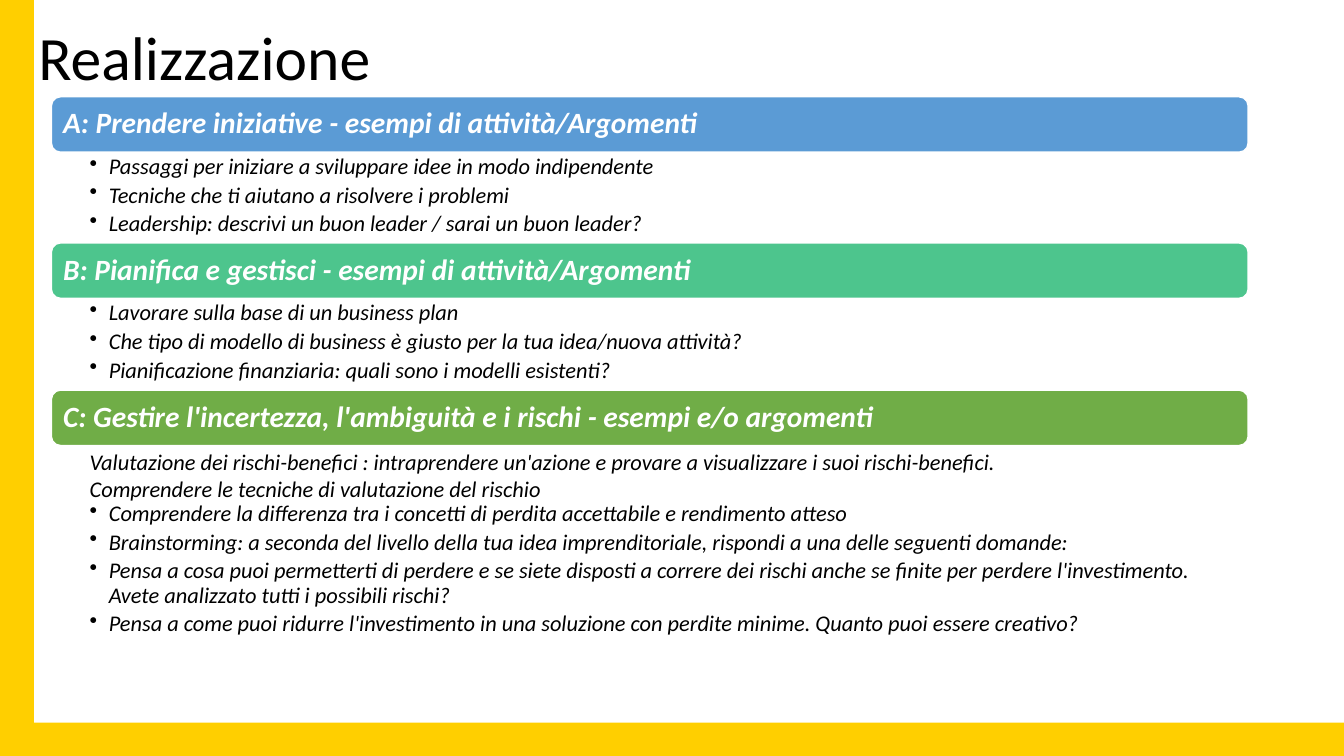
from dataclasses import dataclass

from lxml.etree import SubElement
from pptx import Presentation
from pptx.dml.color import RGBColor
from pptx.enum.shapes import MSO_SHAPE
from pptx.enum.text import MSO_ANCHOR, MSO_AUTO_SIZE, PP_ALIGN
from pptx.oxml.ns import qn
from pptx.util import Inches, Pt


@dataclass(frozen=True)
class Theme:
    font: str = "Calibri"
    yellow: str = "FFCF00"
    blue: str = "5B9BD5"
    teal: str = "4DC58D"
    green: str = "70AD47"
    white: str = "FFFFFF"
    black: str = "000000"
    title_size: int = 44
    heading_size: int = 21
    body_size: int = 16


THEME = Theme()
SLIDE_WIDTH, SLIDE_HEIGHT = 13.33, 7.5
TITLE_BOX = (0.28, -0.12, 11.5, 1.45)
SECTIONS_LEFT, SECTIONS_TOP, SECTIONS_WIDTH = 0.51, 0.96, 11.87
HEADING_HEIGHT = 0.55
BULLET_INDENT = 0.19

# Each section: heading, colour, body height, plain lines, bulleted lines
SECTIONS = [
    ("A: Prendere iniziative - esempi di attività/Argomenti", THEME.blue, 0.9, [], [
        "Passaggi per iniziare a sviluppare idee in modo indipendente",
        "Tecniche che ti aiutano a risolvere i problemi",
        "Leadership: descrivi un buon leader / sarai un buon leader?",
    ]),
    ("B: Pianifica e gestisci - esempi di attività/Argomenti", THEME.teal, 0.91, [], [
        "Lavorare sulla base di un business plan",
        "Che tipo di modello di business è giusto per la tua idea/nuova attività?",
        "Pianificazione finanziaria: quali sono i modelli esistenti?",
    ]),
    ("C: Gestire l'incertezza, l'ambiguità e i rischi - esempi e/o argomenti", THEME.green, 2.04, [
        "Valutazione dei rischi-benefici : intraprendere un'azione e provare a visualizzare "
        "i suoi rischi-benefici.",
        "Comprendere le tecniche di valutazione del rischio",
    ], [
        "Comprendere la differenza tra i concetti di perdita accettabile e rendimento atteso",
        "Brainstorming: a seconda del livello della tua idea imprenditoriale, rispondi a una "
        "delle seguenti domande:",
        "Pensa a cosa puoi permetterti di perdere e se siete disposti a correre dei rischi anche "
        "se finite per perdere l'investimento. Avete analizzato tutti i possibili rischi?",
        "Pensa a come puoi ridurre l'investimento in una soluzione con perdite minime. "
        "Quanto puoi essere creativo?",
    ]),
]


def set_attributes(target, values):
    for name, value in values.items():
        setattr(target, name, value)


def write_paragraph(paragraph, text, size, color, line_spacing=0.9, space_after=0, **font_values):
    set_attributes(paragraph, {
        "alignment": PP_ALIGN.LEFT, "line_spacing": line_spacing,
        "space_before": Pt(0), "space_after": Pt(space_after),
    })
    run = paragraph.add_run()
    run.text = text
    set_attributes(run.font, {"name": THEME.font, "size": Pt(size), **font_values})
    run.font.color.rgb = RGBColor.from_string(color)


def add_bullet(paragraph):
    properties = paragraph._p.get_or_add_pPr()
    indent = Inches(BULLET_INDENT)
    properties.set("marL", str(indent))
    properties.set("indent", str(-indent))
    SubElement(properties, qn("a:buChar")).set("char", "•")


def add_filled_shape(slide, preset, box, color):
    shape = slide.shapes.add_shape(preset, *map(Inches, box))
    shape.shadow.inherit = False
    shape.fill.solid()
    shape.fill.fore_color.rgb = RGBColor.from_string(color)
    shape.line.fill.background()
    return shape


def add_corner_border(slide, box):
    border = add_filled_shape(slide, MSO_SHAPE.CORNER, box, THEME.yellow)
    border.adjustments[0] = 0.044
    border.adjustments[1] = 0.045


def place_title(slide, box, text):
    title = slide.shapes.title
    set_attributes(title, dict(zip(("left", "top", "width", "height"), map(Inches, box))))
    set_attributes(title.text_frame, {
        "word_wrap": True, "auto_size": MSO_AUTO_SIZE.NONE, "vertical_anchor": MSO_ANCHOR.MIDDLE,
    })
    write_paragraph(title.text_frame.paragraphs[0], text, THEME.title_size, THEME.black)


def add_heading_bar(slide, box, text, color):
    bar = add_filled_shape(slide, MSO_SHAPE.ROUNDED_RECTANGLE, box, color)
    bar.line.color.rgb = RGBColor.from_string(THEME.white)
    bar.line.width = Pt(1)
    set_attributes(bar.text_frame, {
        "word_wrap": True, "vertical_anchor": MSO_ANCHOR.MIDDLE,
        "margin_left": Inches(0.09), "margin_right": Inches(0.09),
    })
    write_paragraph(bar.text_frame.paragraphs[0], text, THEME.heading_size, THEME.white,
                    bold=True, italic=True)


def add_section_body(slide, box, plain_lines, bullet_lines):
    frame = slide.shapes.add_textbox(*map(Inches, box)).text_frame
    set_attributes(frame, {
        "word_wrap": True, "margin_left": Inches(0.38), "margin_right": Inches(0.16),
        "margin_top": Inches(0.03), "margin_bottom": Inches(0.03),
    })
    for index, text in enumerate(plain_lines + bullet_lines):
        paragraph = frame.paragraphs[0] if index == 0 else frame.add_paragraph()
        bulleted = index >= len(plain_lines)
        spacing = {"line_spacing": 0.9, "space_after": 3.2} if bulleted else {"line_spacing": 1.0}
        write_paragraph(paragraph, text, THEME.body_size, THEME.black, italic=True, **spacing)
        if bulleted:
            add_bullet(paragraph)


def add_sections(slide, left, top, width):
    """Stack heading bars and their bodies downwards from the given top."""
    for heading, color, body_height, plain_lines, bullet_lines in SECTIONS:
        add_heading_bar(slide, (left, top, width, HEADING_HEIGHT), heading, color)
        top += HEADING_HEIGHT
        add_section_body(slide, (left, top, width, body_height), plain_lines, bullet_lines)
        top += body_height


def main():
    presentation = Presentation()
    presentation.slide_width = Inches(SLIDE_WIDTH)
    presentation.slide_height = Inches(SLIDE_HEIGHT)
    slide = presentation.slides.add_slide(presentation.slide_layouts.get_by_name("Title Only"))
    add_corner_border(slide, (0, 0, SLIDE_WIDTH, SLIDE_HEIGHT))
    place_title(slide, TITLE_BOX, "Realizzazione")
    add_sections(slide, SECTIONS_LEFT, SECTIONS_TOP, SECTIONS_WIDTH)
    presentation.save("out.pptx")


if __name__ == "__main__":
    main()
